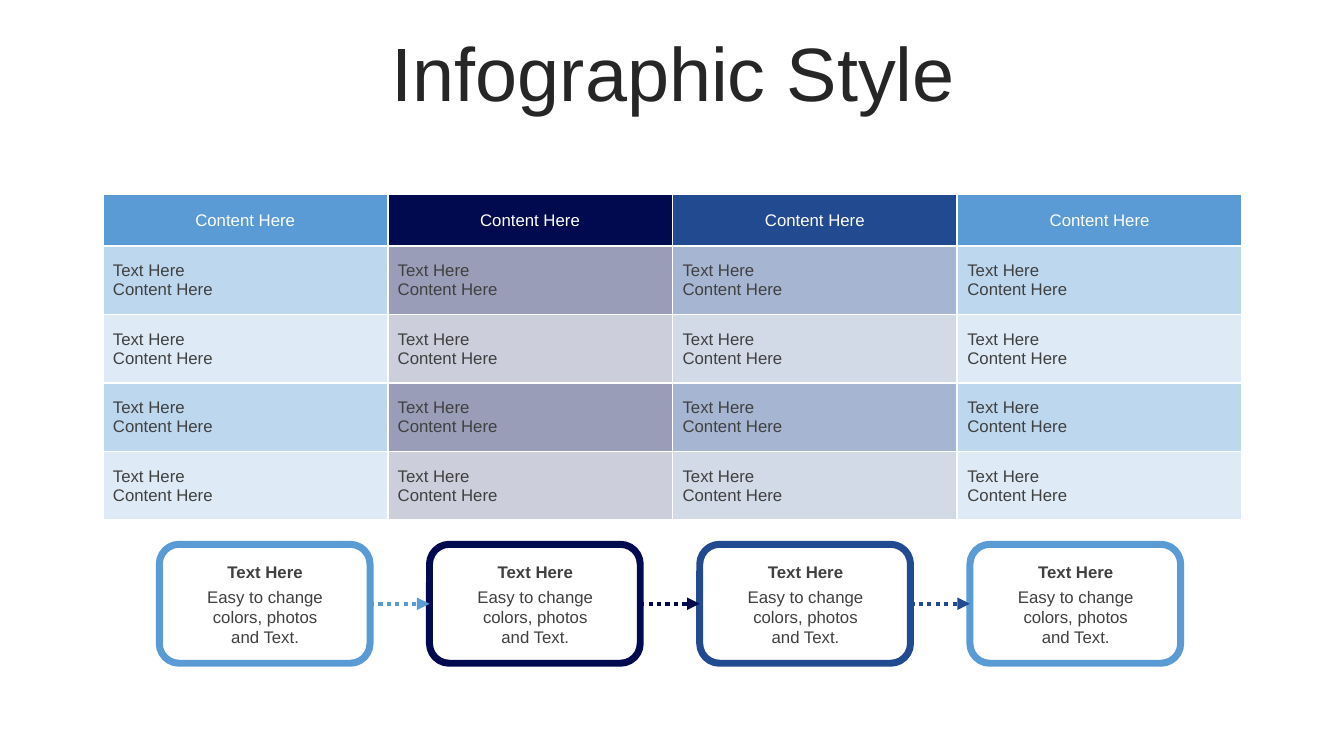
from lxml import etree
from pptx import Presentation
from pptx.dml.color import RGBColor
from pptx.enum.dml import MSO_LINE
from pptx.enum.shapes import MSO_CONNECTOR, MSO_SHAPE
from pptx.enum.text import MSO_ANCHOR, PP_ALIGN
from pptx.oxml.ns import qn
from pptx.util import Pt

LEFT, CENTER = PP_ALIGN.LEFT, PP_ALIGN.CENTER
TOP, MIDDLE = MSO_ANCHOR.TOP, MSO_ANCHOR.MIDDLE
ROUND, LINE, DOTS = MSO_SHAPE.ROUNDED_RECTANGLE, MSO_CONNECTOR.STRAIGHT, MSO_LINE.ROUND_DOT

# Content
TITLE = "Infographic Style"
HEADS = ["Content Here"] * 4
CELL = ["Text Here", "Content Here"]
CARDS = [("Text Here", "Easy to change colors, photos and Text.")] * 4
HUES = ["sky", "navy", "blue", "sky"]
TINTS = [40, 20, 40, 20]  # opacity of each body row, percent
COLORS = {"sky": "5A9BD5", "navy": "010A4F", "blue": "224A90",
          "white": "FFFFFF", "ink": "262626", "gray": "404040"}

# Layout, 100 px to the inch
PX = 9144
GRID = (102, 193, 1130, 323)
HEAD_H, ROW_H = 51, 68
CARD_X, CARD_Y, CARD_W, CARD_H, STEP = 158, 540, 209, 118, 268


def px(*nums):
    return [n * PX for n in nums]


def rgb(name):
    return RGBColor.from_string(COLORS[name])


def write(frame, *lines, size=12, color="gray", bold=False, align=CENTER,
          anchor=TOP, space=None, before=0):
    frame.word_wrap = True
    frame.vertical_anchor = anchor
    for i, line in enumerate(lines):
        para = frame.paragraphs[0] if i == 0 else frame.add_paragraph()
        para.alignment = align
        para.line_spacing = space
        para.space_before = Pt(before)
        run = para.add_run()
        run.text = line
        font = run.font
        font.name, font.size, font.bold = "Arial", Pt(size), bold
        font.color.rgb = rgb(color)


def paint(cell, hue, tint=100):
    # Borders must precede the fill in the cell properties
    props = cell._tc.get_or_add_tcPr()
    for side in ("lnL", "lnR", "lnT", "lnB"):
        edge = etree.SubElement(props, qn("a:" + side), w=str(Pt(1.5)))
        solid = etree.SubElement(edge, qn("a:solidFill"))
        etree.SubElement(solid, qn("a:srgbClr"), val=COLORS["white"])
    cell.fill.solid()
    cell.fill.fore_color.rgb = rgb(hue)
    if tint < 100:
        tone = props.find(qn("a:solidFill")).find(qn("a:srgbClr"))
        etree.SubElement(tone, qn("a:alpha"), val=str(tint * 1000))


def add_card(x, hue, head, body):
    card = shapes.add_shape(ROUND, *px(x, CARD_Y, CARD_W, CARD_H))
    card.shadow.inherit = False
    card.fill.solid()
    card.fill.fore_color.rgb = rgb("white")
    card.line.color.rgb = rgb(hue)
    card.line.width = Pt(5)
    group = shapes.add_group_shape().shapes
    note = group.add_textbox(*px(x + 30, CARD_Y + 37, 150, 71))
    write(note.text_frame, body)
    label = group.add_textbox(*px(x + 30, CARD_Y + 12, 150, 30))
    write(label.text_frame, head, bold=True)
    return card


def add_arrow(start, end, hue):
    arrow = shapes.add_connector(LINE, 0, 0, 0, 0)
    arrow.begin_connect(start, 3)
    arrow.end_connect(end, 1)
    arrow.line.color.rgb = rgb(hue)
    arrow.line.width = Pt(3)
    arrow.line.dash_style = DOTS
    etree.SubElement(arrow.line._get_or_add_ln(), qn("a:tailEnd"), type="triangle")
    etree.SubElement(arrow._element.spPr, qn("a:effectLst"))


deck = Presentation()
deck.slide_width, deck.slide_height = px(1333, 750)
shapes = deck.slides.add_slide(deck.slide_layouts[6]).shapes

# Title
title = shapes.add_textbox(*px(35, 37, 1266, 79))
write(title.text_frame, TITLE, size=54, color="ink", anchor=MIDDLE, space=0.9, before=10)

# Table
table = shapes.add_table(1 + len(TINTS), len(HEADS), *px(*GRID)).table
table.first_row = table.horz_banding = False
for r, row in enumerate(table.rows):
    row.height = (ROW_H if r else HEAD_H) * PX
    for c, hue in enumerate(HUES):
        cell = table.cell(r, c)
        cell.vertical_anchor = MIDDLE
        if r:
            paint(cell, hue, TINTS[r - 1])
            write(cell.text_frame, *CELL, align=LEFT, anchor=MIDDLE)
        else:
            paint(cell, hue)
            write(cell.text_frame, HEADS[c], color="white", anchor=MIDDLE)

# Cards and the arrows between them
cards = [add_card(CARD_X + i * STEP, hue, *words)
         for i, (hue, words) in enumerate(zip(HUES, CARDS))]
for start, end, hue in zip(cards, cards[1:], HUES):
    add_arrow(start, end, hue)

deck.save("out.pptx")
